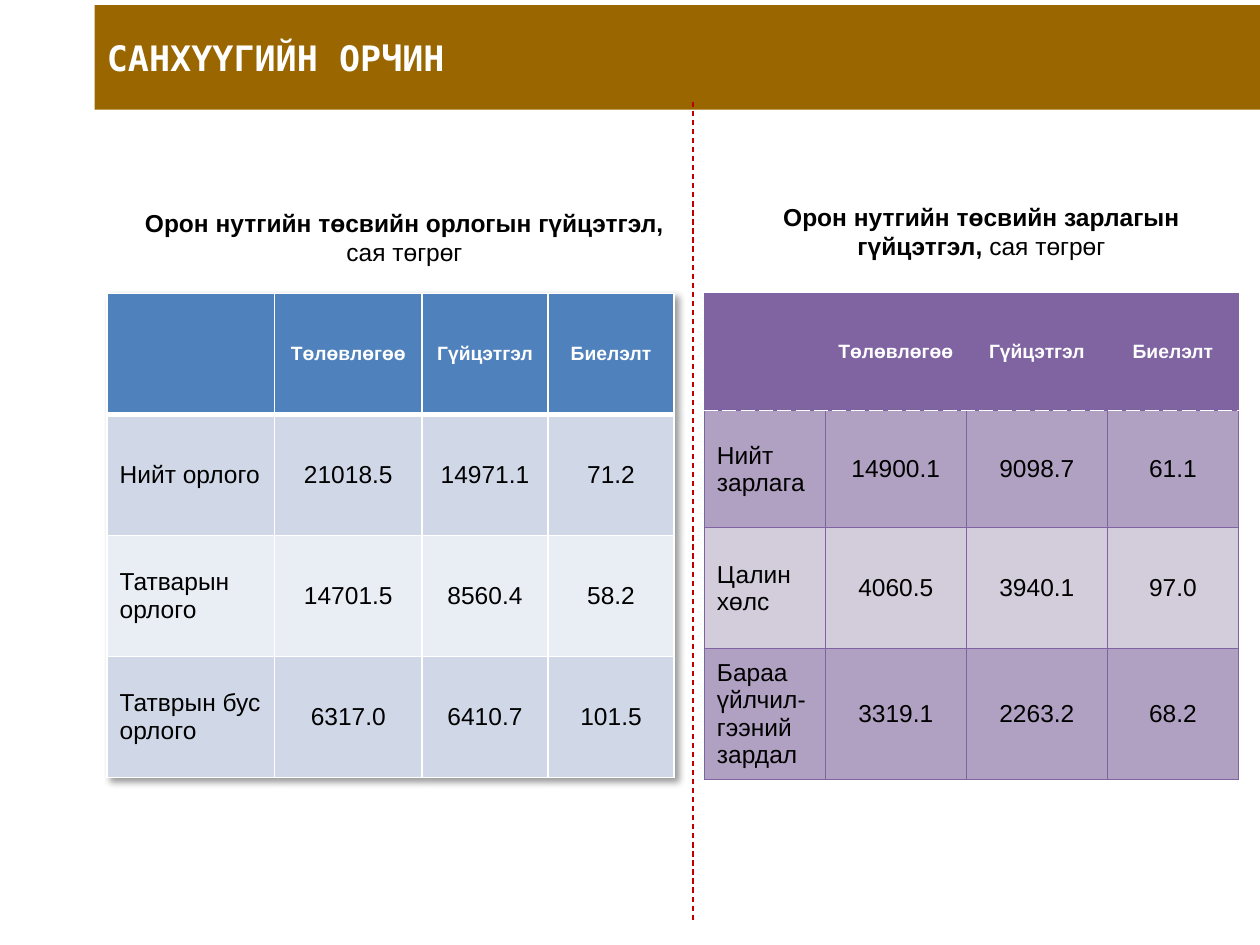
from lxml import etree
from pptx import Presentation
from pptx.dml.color import RGBColor
from pptx.enum.dml import MSO_LINE
from pptx.enum.shapes import MSO_CONNECTOR, MSO_SHAPE
from pptx.enum.text import MSO_ANCHOR, PP_ALIGN
from pptx.oxml import parse_xml
from pptx.oxml.ns import nsdecls, qn
from pptx.util import Inches, Pt

LEFT, CENTER = PP_ALIGN.LEFT, PP_ALIGN.CENTER
MIDDLE = MSO_ANCHOR.MIDDLE
DASH = MSO_LINE.DASH
RECT = MSO_SHAPE.RECTANGLE
STRAIGHT = MSO_CONNECTOR.STRAIGHT

WHITE = RGBColor(0xFF, 0xFF, 0xFF)
BLACK = RGBColor(0, 0, 0)
BROWN = RGBColor(0x99, 0x66, 0x00)
RED = RGBColor(0xC0, 0, 0)
BLUE = RGBColor(0x4F, 0x81, 0xBD)
BLUE_BANDS = RGBColor(0xD0, 0xD8, 0xE8), RGBColor(0xE9, 0xED, 0xF4)
PURPLE = RGBColor(0x80, 0x64, 0xA2)
PURPLE_BANDS = RGBColor(0xB0, 0xA1, 0xC2), RGBColor(0xD3, 0xCC, 0xDA)

HEADER = ["", "Төлөвлөгөө", "Гүйцэтгэл", "Биелэлт"]
INCOME = [
    HEADER,
    ["Нийт орлого", "21018.5", "14971.1", "71.2"],
    ["Татварын орлого", "14701.5", "8560.4", "58.2"],
    ["Татврын бус орлого", "6317.0", "6410.7", "101.5"],
]
COSTS = [
    HEADER,
    ["Нийт зарлага", "14900.1", "9098.7", "61.1"],
    ["Цалин хөлс", "4060.5", "3940.1", "97.0"],
    ["Бараа үйлчил-гээний зардал", "3319.1", "2263.2", "68.2"],
]


def style(font, size, color, bold, name="Arial"):
    font.name = name
    font.size = Pt(size)
    font.bold = bold
    font.color.rgb = color


def add_title(slide, text):
    bar = slide.shapes.add_shape(
        RECT, Inches(0.75), Inches(0.04), Inches(9.25), Inches(0.83))
    bar.shadow.inherit = False
    bar.fill.solid()
    bar.fill.fore_color.rgb = BROWN
    bar.line.fill.background()
    frame = bar.text_frame
    frame.text = text
    frame.vertical_anchor = MIDDLE
    para = frame.paragraphs[0]
    para.alignment = LEFT
    style(para.runs[0].font, 20, WHITE, True, "DejaVu Sans Mono")


def add_rule(slide):
    rule = slide.shapes.add_connector(
        STRAIGHT, Inches(5.5), Inches(0.81), Inches(5.5), Inches(7.31))
    rule.line.color.rgb = RED
    rule.line.width = Pt(0.75)
    rule.line.dash_style = DASH
    etree.SubElement(rule._element.spPr, qn("a:effectLst"))


def add_caption(slide, box, text):
    frame = slide.shapes.add_textbox(*map(Inches, box)).text_frame
    frame.word_wrap = True
    frame.vertical_anchor = MIDDLE
    para = frame.paragraphs[0]
    para.alignment = CENTER
    for part, bold in ((text, True), (" сая төгрөг", False)):
        run = para.add_run()
        run.text = part
        style(run.font, 14, BLACK, bold)


def add_edge(cell, side, color, width, dash="solid"):
    cell._tc.get_or_add_tcPr().append(parse_xml(
        f'<a:ln{side} {nsdecls("a")} w="{Pt(width)}">'
        f'<a:solidFill><a:srgbClr val="{color}"/></a:solidFill>'
        f'<a:prstDash val="{dash}"/></a:ln{side}>'))


def fill_cell(cell, text, fill, is_head, align):
    cell.fill.solid()
    cell.fill.fore_color.rgb = fill
    cell.vertical_anchor = MIDDLE
    cell.text_frame.text = text
    para = cell.text_frame.paragraphs[0]
    para.alignment = align
    size, color = (11, WHITE) if is_head else (14, BLACK)
    for run in para.runs:
        style(run.font, size, color, is_head)


def add_grid(slide, spot, cols, rows, data, head, bands, edge, seam):
    table = slide.shapes.add_table(
        len(rows), len(cols), *map(Inches, (*spot, sum(cols), sum(rows)))).table
    table.first_row = True
    table.horz_banding = False
    for col, width in zip(table.columns, cols):
        col.width = Inches(width)
    for row, height in zip(table.rows, rows):
        row.height = Inches(height)
    for r, line in enumerate(data):
        fill = bands[(r - 1) % 2] if r else head
        for c, text in enumerate(line):
            cell = table.cell(r, c)
            for side in "LRTB":
                on_seam = (r, side) in ((0, "B"), (1, "T"))
                add_edge(cell, side, *(seam if on_seam else edge))
            fill_cell(cell, text, fill, r == 0, CENTER if c or not r else LEFT)
    return table


def add_shadow(table):
    table._tbl.tblPr.insert(0, parse_xml(
        f'<a:effectLst {nsdecls("a")}>'
        '<a:outerShdw blurRad="50800" dist="38100" dir="2700000" algn="tl" '
        'rotWithShape="0"><a:srgbClr val="000000"><a:alpha val="40000"/>'
        '</a:srgbClr></a:outerShdw></a:effectLst>'))


def main():
    deck = Presentation()
    deck.slide_width, deck.slide_height = Inches(10), Inches(7.5)
    slide = deck.slides.add_slide(deck.slide_layouts[6])
    add_title(slide, "САНХҮҮГИЙН ОРЧИН")
    add_rule(slide)
    add_caption(slide, (0.92, 1.67, 4.58, 0.42),
                "Орон нутгийн төсвийн орлогын гүйцэтгэл,")
    income = add_grid(slide, (0.85, 2.33), [1.33, 1.17, 1, 1], [0.96] * 4,
                      INCOME, BLUE, BLUE_BANDS, (WHITE, 1), (WHITE, 3))
    add_shadow(income)
    add_caption(slide, (5.75, 1.67, 4.08, 0.33),
                "Орон нутгийн төсвийн зарлагын гүйцэтгэл,")
    add_grid(slide, (5.59, 2.33), [0.96, 1.12, 1.12, 1.04],
             [0.93, 0.93, 0.96, 1.03], COSTS, PURPLE, PURPLE_BANDS,
             (PURPLE, 0.75), (WHITE, 0.9, "sysDash"))
    deck.save("out.pptx")


if __name__ == "__main__":
    main()
